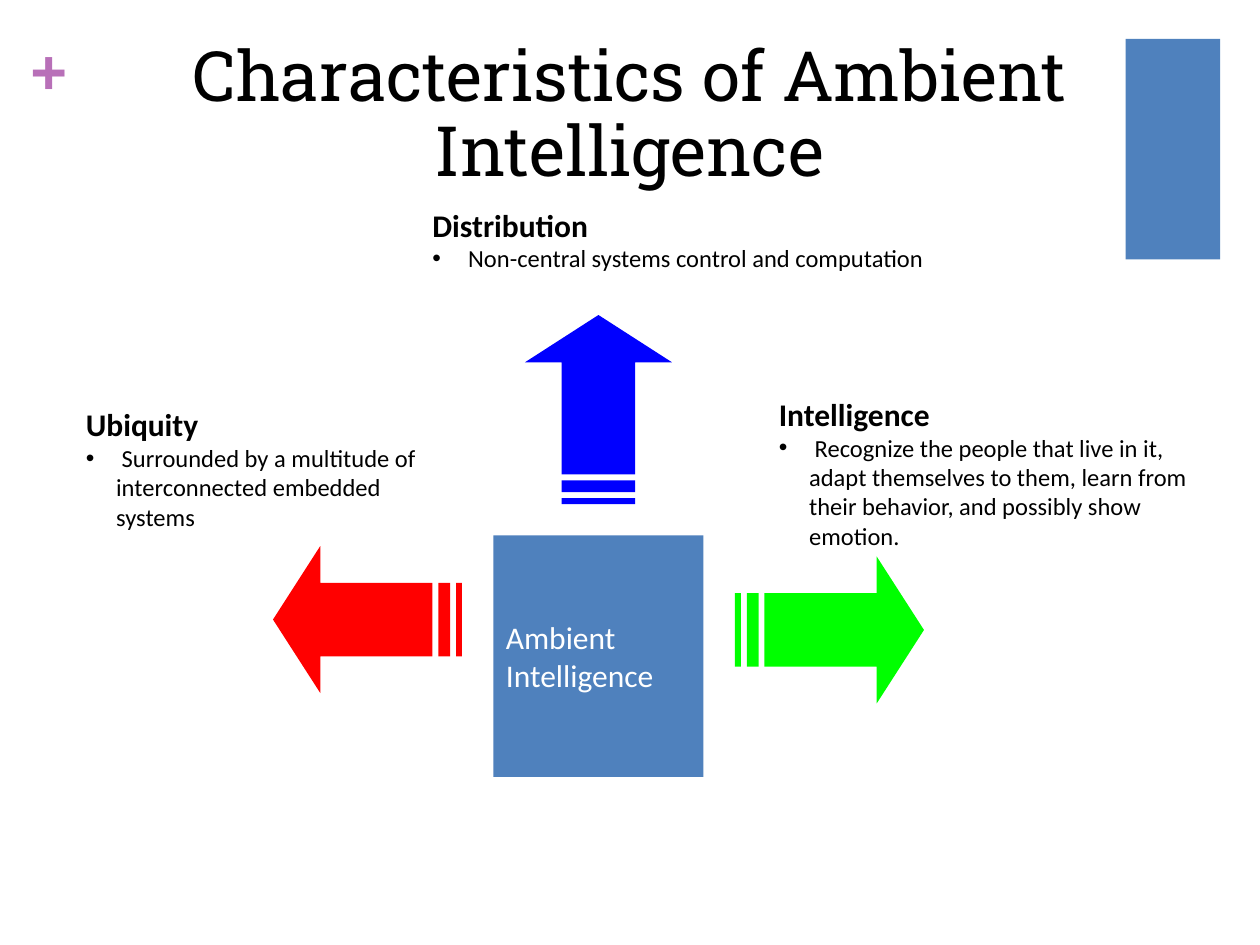
"""Build the slide on the characteristics of ambient intelligence."""
import pptx
import pptx.dml.color
import pptx.enum.shapes
import pptx.enum.text
import pptx.oxml
import pptx.oxml.ns
import pptx.util

Inches, Pt = pptx.util.Inches, pptx.util.Pt
PP_ALIGN = pptx.enum.text.PP_ALIGN
ANCHOR = pptx.enum.text.MSO_ANCHOR
WIDTH, HEIGHT = 10, 7.5
COLS, ROWS = 120, 90


def rgb(value):
    return pptx.dml.color.RGBColor.from_string(value)


class Deck:
    heading_size, body_size, title_size = 18, 14, 39.6
    font, title_font = "Calibri", "Roboto Slab"
    ink, paper, panel = "000000", "FFFFFF", "4F81BD"
    indent = 0.24

    def __init__(self):
        self.prs = pptx.Presentation()
        self.prs.slide_width, self.prs.slide_height = Inches(WIDTH), Inches(HEIGHT)
        self.s = self.prs.slides.add_slide(self.prs.slide_layouts[5])

    def box(self, col, row, cols, rows):
        return (Inches(col * WIDTH / COLS), Inches(row * HEIGHT / ROWS),
                Inches(cols * WIDTH / COLS), Inches(rows * HEIGHT / ROWS))

    def fill(self, sp, color):
        sp.fill.solid()
        sp.fill.fore_color.rgb = rgb(color)
        sp.line.fill.background()
        sp.shadow.inherit = False

    def style(self, p, size, color, bold=False, font=None):
        for r in p.runs:
            r.font.name = font or self.font
            r.font.size = Pt(size)
            r.font.bold = bold
            r.font.color.rgb = rgb(color)

    def title(self, text, *cells):
        sp = self.s.shapes.title
        sp.left, sp.top, sp.width, sp.height = self.box(*cells)
        tf = sp.text_frame
        tf.text = text
        tf.auto_size = pptx.enum.text.MSO_AUTO_SIZE.NONE
        tf.vertical_anchor = ANCHOR.MIDDLE
        p = tf.paragraphs[0]
        p.alignment, p.line_spacing = PP_ALIGN.CENTER, 0.9
        self.style(p, self.title_size, self.ink, font=self.title_font)

    def rect(self, *cells, text=""):
        sp = self.s.shapes.add_shape(pptx.enum.shapes.MSO_SHAPE.RECTANGLE, *self.box(*cells))
        self.fill(sp, self.panel)
        if text:
            tf = sp.text_frame
            tf.text = text
            tf.vertical_anchor = ANCHOR.MIDDLE
            for p in tf.paragraphs:
                p.alignment = PP_ALIGN.LEFT
                self.style(p, self.heading_size, self.paper)

    def mark(self, text, color, *cells):
        tf = self.s.shapes.add_textbox(*self.box(*cells)).text_frame
        tf.word_wrap = True
        tf.margin_left = tf.margin_right = tf.margin_top = tf.margin_bottom = 0
        tf.text = text
        self.style(tf.paragraphs[0], 36, color, True, "Arial")

    def striped_arrow(self, color, rotation, *cells):
        left, top, width, height = self.box(*cells)
        head = [(24, 0), (24, 1), (5, 1), (5, 3), (24, 3), (24, 4), (32, 2)]
        stripes = [[(a, 1), (a, 3), (b, 3), (b, 1)] for a, b in ((2, 4), (0, 1))]
        builder = self.s.shapes.build_freeform(*head[0], scale=(width / 32, height / 4))
        builder.add_line_segments(head[1:])
        for stripe in stripes:
            builder.move_to(*stripe[0])
            builder.add_line_segments(stripe[1:])
        sp = builder.convert_to_shape(left, top)
        sp.rotation = rotation
        self.fill(sp, color)

    def note(self, heading, body, *cells):
        tf = self.s.shapes.add_textbox(*self.box(*cells)).text_frame
        tf.word_wrap = True
        tf.text = f"{heading}\n{body}"
        first, item = tf.paragraphs
        self.style(first, self.heading_size, self.ink, True)
        self.style(item, self.body_size, self.ink)
        pPr = item._p.get_or_add_pPr()
        pPr.set("marL", str(Inches(self.indent)))
        pPr.set("indent", str(-Inches(self.indent)))
        for tag, key, value in (("a:buFont", "typeface", "Arial"), ("a:buChar", "char", "•")):
            bullet = pptx.oxml.parse_xml(f'<{tag} {pptx.oxml.ns.nsdecls("a")} {key}="{value}"/>')
            pPr.append(bullet)


def main():
    deck = Deck()
    deck.rect(107.2, 3.7, 9, 21)
    deck.mark("+", "B870B8", 2.9, 3, 3.4, 7.3)
    deck.title("Characteristics of Ambient Intelligence", 6, 3.6, 108, 15)
    for color, rotation, col, row in (("00FF00", 0, 70, 53), ("FF0000", 180, 26, 52),
                                      ("0000FF", 270, 48, 32)):
        deck.striped_arrow(color, rotation, col, row, 18, 14)
    deck.rect(47, 51, 20, 23, text="Ambient\nIntelligence")
    deck.note("Intelligence", " Recognize the people that live in it, adapt themselves to them, "
              "learn from their behavior, and possibly show emotion.", 73, 37, 43, 16.2)
    deck.note("Ubiquity", " Surrounded by a multitude of interconnected embedded systems",
              7, 38, 37, 13.3)
    deck.note("Distribution ", " Non-central systems control and computation", 40, 19, 60, 7.7)
    deck.prs.save("out.pptx")


if __name__ == "__main__":
    main()
